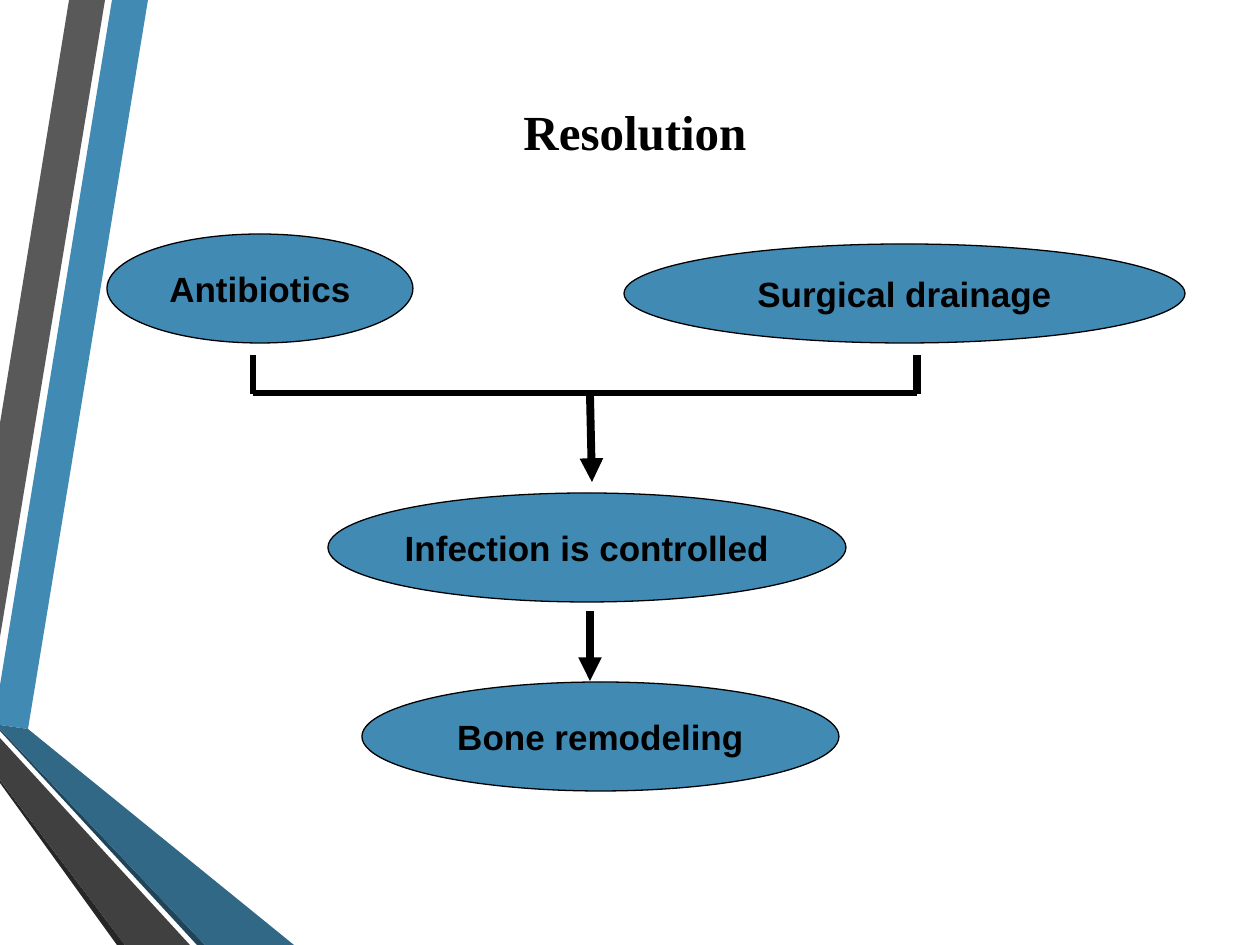
import pptx
import pptx.util
import pptx.dml.color
import pptx.enum.shapes
import pptx.enum.text
import pptx.oxml
import pptx.oxml.ns

PX = 914400 // 126  # EMU per pixel

# Content, in pixels
BANDS = [
    ("418AB3", [(0, 685), (0, 725), (28, 729), (148, 0), (112, 0)]),
    ("595959", [(105, 0), (69, 0), (0, 423), (0, 637)]),
    ("262626", [(0, 780), (0, 783), (117, 945), (125, 945)]),
    ("20455A", [(0, 729), (0, 731), (197, 945), (205, 945)]),
    ("316886", [(0, 729), (205, 945), (294, 945), (28, 729), (0, 725)]),
    ("404040", [(0, 780), (125, 945), (190, 945), (0, 738)]),
]
TITLE = ("Resolution", (124, 38, 1022, 186))
STEPS = [
    ("Antibiotics", (107, 234, 306, 109)),
    ("Surgical drainage", (624, 244, 561, 99)),
    ("Infection is controlled", (328, 493, 518, 109)),
    ("Bone remodeling", (362, 682, 477, 109)),
]
# start, end, width in points, arrowhead
LINES = [
    ((253, 355), (253, 394), 3, False),
    ((253, 393), (917, 393), 3, False),
    ((917, 355), (917, 394), 4.5, False),
    ((590, 394), (592, 482), 4.5, True),
    ((590, 611), (590, 681), 4.5, True),
]


def color(value):
    return pptx.dml.color.RGBColor.from_string(value)


def emu(values):
    return [round(v * PX) for v in values]


def fill(sp, value):
    sp.shadow.inherit = False
    sp.fill.solid()
    sp.fill.fore_color.rgb = color(value)


def write(sp, text, font="Arial", size=20, wrap=False):
    tf = sp.text_frame
    tf.word_wrap = wrap
    tf.vertical_anchor = pptx.enum.text.MSO_ANCHOR.MIDDLE
    p = tf.paragraphs[0]
    p.alignment = pptx.enum.text.PP_ALIGN.CENTER
    r = p.add_run()
    r.text = text
    r.font.name = font
    r.font.size = pptx.util.Pt(size)
    r.font.bold = True
    r.font.color.rgb = color("000000")


prs = pptx.Presentation()
prs.slide_width = pptx.util.Inches(10)
prs.slide_height = pptx.util.Inches(7.5)
s = prs.slides.add_slide(prs.slide_layouts[6])

# Decorative bands on the left
for value, points in BANDS:
    builder = s.shapes.build_freeform(*points[0], scale=PX)
    builder.add_line_segments(points[1:], close=True)
    sp = builder.convert_to_shape()
    fill(sp, value)
    sp.line.fill.background()

# Title
text, box = TITLE
write(s.shapes.add_textbox(*emu(box)), text, font="Times New Roman", size=28, wrap=True)

# Step ellipses
for text, box in STEPS:
    sp = s.shapes.add_shape(pptx.enum.shapes.MSO_SHAPE.OVAL, *emu(box))
    fill(sp, "418AB3")
    sp.line.color.rgb = color("000000")
    sp.line.width = pptx.util.Pt(0.75)
    write(sp, text)

# Bracket and arrows
for start, end, width, arrow in LINES:
    line = s.shapes.add_connector(
        pptx.enum.shapes.MSO_CONNECTOR.STRAIGHT, *emu(start + end))
    line.line.color.rgb = color("000000")
    line.line.width = pptx.util.Pt(width)
    if arrow:
        tail = pptx.oxml.parse_xml(
            "<a:tailEnd %s type='triangle'/>" % pptx.oxml.ns.nsdecls("a"))
        line.line._get_or_add_ln().append(tail)
    line._element.spPr.append(pptx.oxml.parse_xml(
        "<a:effectLst %s/>" % pptx.oxml.ns.nsdecls("a")))

prs.save("out.pptx")
